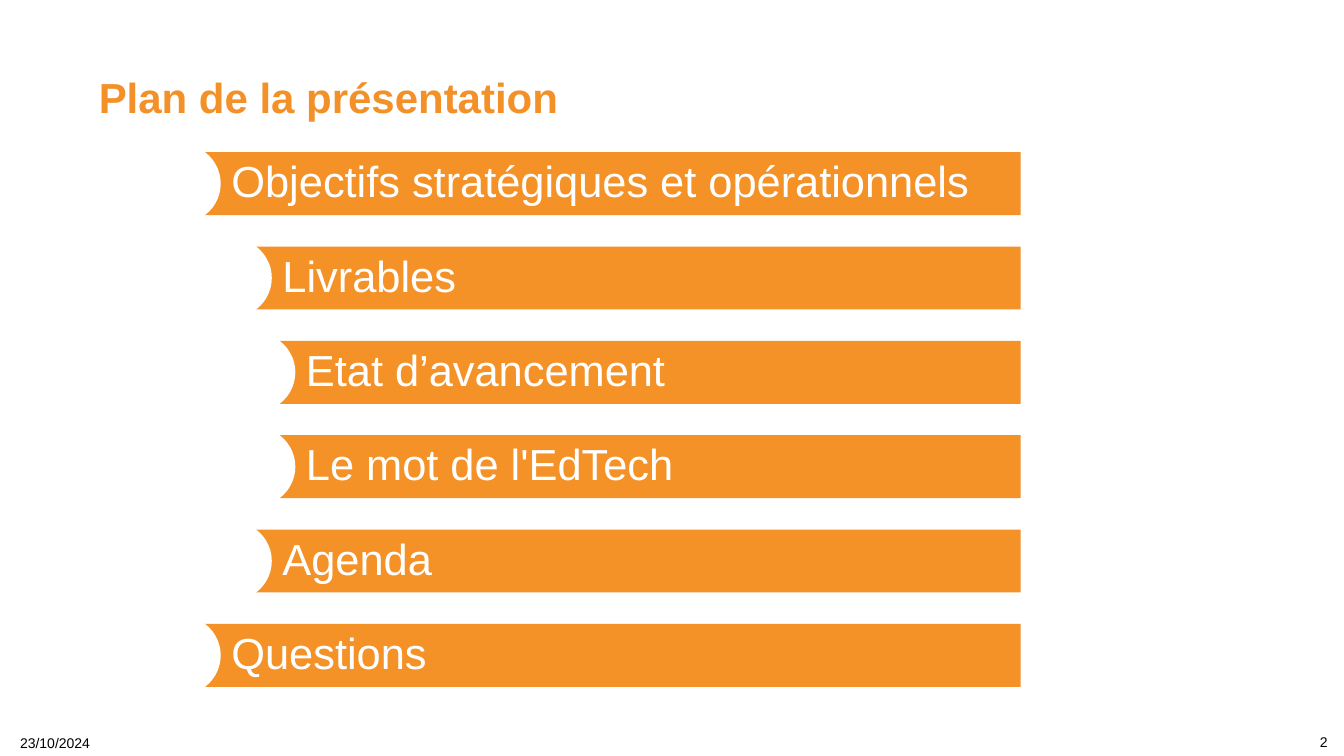
from dataclasses import dataclass

from pptx import Presentation
from pptx import util as u
from pptx.dml.color import RGBColor
from pptx.enum import shapes, text

WIDE, HIGH = u.Inches(13.333), u.Inches(7.5)
FONT = "Arial"
COLORS = {
    "title": "F39128",
    "bar": "F49127",
    "paper": "FFFFFF",
    "ink": "000000",
}
TOP, LAST = 20.13, 82.53
RIGHT, DEPTH = 75.95, 8.32
DISC = 0.78


@dataclass
class Bar:
    label: str
    left: float


@dataclass
class Note:
    label: str
    left: float
    top: float
    align: text.PP_ALIGN


BARS = [
    Bar("Objectifs stratégiques et opérationnels", 13.5),
    Bar("Livrables", 17.3),
    Bar("Etat d’avancement", 19.05),
    Bar("Le mot de l'EdTech", 19.05),
    Bar("Agenda", 17.3),
    Bar("Questions", 13.5),
]
NOTES = [
    Note("2", 76.58, 96.4, text.PP_ALIGN.RIGHT),
    Note("23/10/2024", 1.2, 96.53, text.PP_ALIGN.LEFT),
]


def col(share: float) -> int:
    return round(WIDE * share / 100)


def row(share: float) -> int:
    return round(HIGH * share / 100)


def tint(name: str) -> RGBColor:
    return RGBColor.from_string(COLORS[name])


def write(shape, label: str, size: int, color: str, pads: tuple,
          anchor=text.MSO_ANCHOR.MIDDLE, align=text.PP_ALIGN.LEFT,
          lead: float = 1.0, bold: bool = False) -> None:
    frame = shape.text_frame
    frame.text = label
    frame.word_wrap = True
    frame.auto_size = text.MSO_AUTO_SIZE.NONE
    frame.vertical_anchor = anchor
    frame.margin_left, frame.margin_right = col(pads[0]), col(pads[1])
    frame.margin_top = frame.margin_bottom = row(pads[2])
    para = frame.paragraphs[0]
    para.alignment = align
    para.line_spacing = lead
    para.font.name = FONT
    para.font.size = u.Pt(size)
    para.font.bold = bold
    para.font.color.rgb = tint(color)


def shape(slide, kind, box: tuple, color: str):
    item = slide.shapes.add_shape(kind, *box)
    item.shadow.inherit = False
    item.fill.solid()
    item.fill.fore_color.rgb = tint(color)
    item.line.fill.background()
    return item


def draw_title(slide) -> None:
    title = slide.shapes.title
    title.left, title.top = col(7.35), row(10.27)
    title.width, title.height = col(63.3), row(7.47)
    write(title, "Plan de la présentation", 30, "title", (0, 0, 0),
          anchor=text.MSO_ANCHOR.TOP, lead=0.9, bold=True)


def draw_bar(slide, bar: Bar, top: float) -> None:
    box = col(bar.left), row(top), col(RIGHT - bar.left), row(DEPTH)
    band = shape(slide, shapes.MSO_SHAPE.RECTANGLE, box, "bar")
    write(band, bar.label, 31, "paper", (3.72, 0.66, 1.17), lead=0.9)
    side = u.Inches(DISC)
    left = col(bar.left) - side // 2
    mid = row(top + DEPTH / 2) - side // 2
    shape(slide, shapes.MSO_SHAPE.OVAL, (left, mid, side, side), "paper")


def draw_note(slide, note: Note) -> None:
    box = slide.shapes.add_textbox(
        col(note.left), row(note.top), col(22.5), row(3.6))
    write(box, note.label, 10, "ink", (0.3, 0.3, 0.53), align=note.align)


def main() -> None:
    deck = Presentation()
    deck.slide_width, deck.slide_height = WIDE, HIGH
    slide = deck.slides.add_slide(deck.slide_layouts.get_by_name("Title Only"))
    draw_title(slide)
    step = (LAST - TOP) / (len(BARS) - 1)
    for i, bar in enumerate(BARS):
        draw_bar(slide, bar, TOP + i * step)
    for note in NOTES:
        draw_note(slide, note)
    deck.save("out.pptx")


if __name__ == "__main__":
    main()
